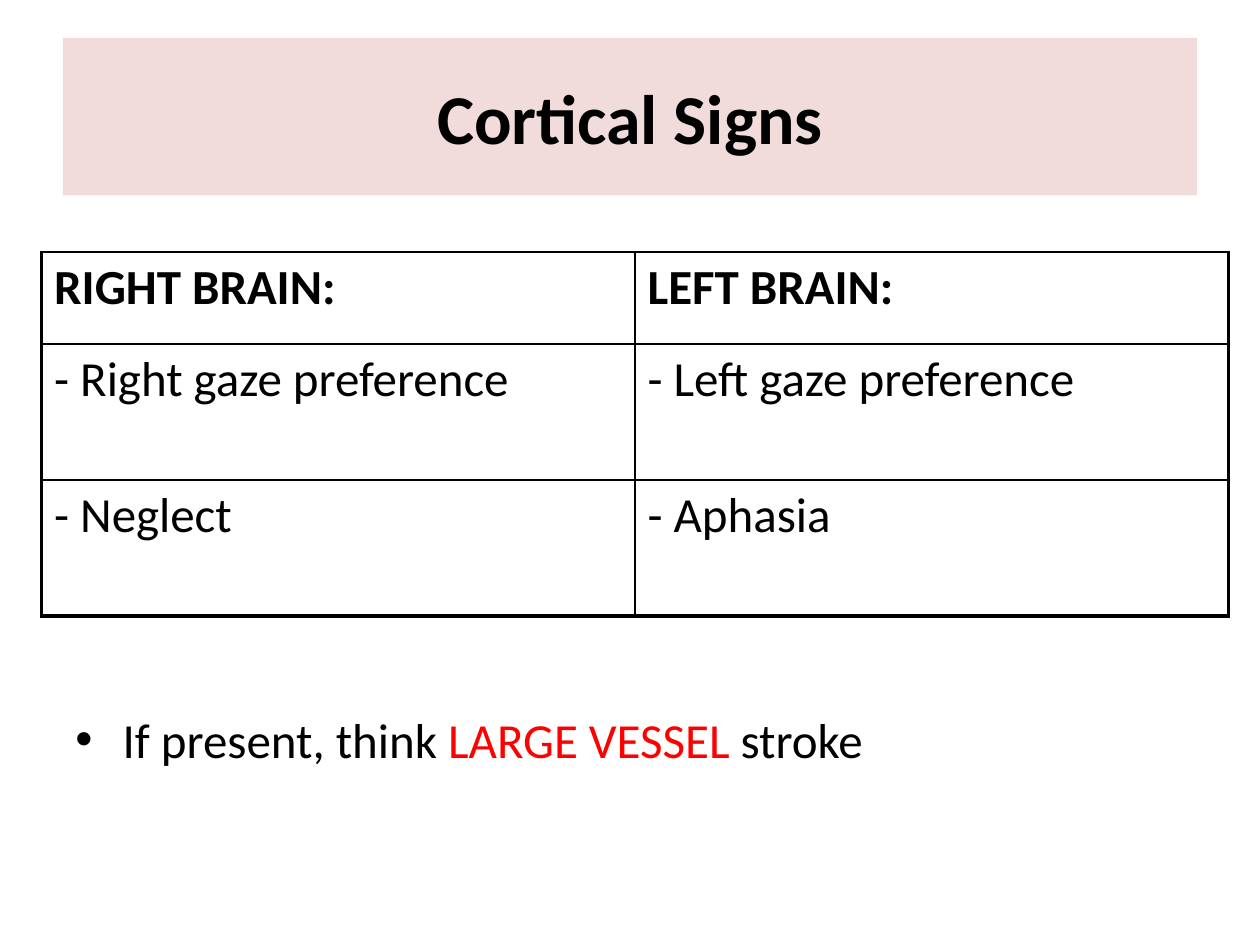
from dataclasses import dataclass

from lxml import etree
from pptx import Presentation
from pptx.dml.color import RGBColor
from pptx.enum.shapes import MSO_SHAPE
from pptx.enum.text import MSO_ANCHOR, PP_ALIGN
from pptx.oxml.ns import qn
from pptx.util import Inches, Pt

RECT = MSO_SHAPE.RECTANGLE
TOP, MIDDLE = MSO_ANCHOR.TOP, MSO_ANCHOR.MIDDLE
LEFT, CENTER = PP_ALIGN.LEFT, PP_ALIGN.CENTER
COLS, ROWS = 100, 75


@dataclass(frozen=True)
class Theme:
    font: str = "Calibri"
    ink: str = "000000"
    alert: str = "FF0000"
    band: str = "F2DCDB"
    head: int = 40
    body: int = 28
    gap: float = 5.6
    thin: float = 1
    thick: float = 2.25


def write(frame, runs, theme, size, bold=False, align=LEFT, gap=0):
    para = frame.paragraphs[0]
    para.alignment = align
    para.space_before = Pt(gap)
    for text, color in runs:
        run = para.add_run()
        run.text = text
        font = run.font
        font.name, font.size, font.bold = theme.font, Pt(size), bold
        font.color.rgb = RGBColor.from_string(color)
    return para


class Deck:
    def __init__(self, theme):
        self.theme = theme
        self.file = Presentation()
        self.file.slide_width, self.file.slide_height = Inches(10), Inches(7.5)
        self.slide = self.file.slides.add_slide(self.file.slide_layouts[6])

    def wide(self, cols):
        return round(self.file.slide_width * cols / COLS)

    def high(self, rows):
        return round(self.file.slide_height * rows / ROWS)

    def place(self, left, top, width, height):
        return self.wide(left), self.high(top), self.wide(width), self.high(height)

    def title(self, text, *box):
        theme = self.theme
        shape = self.slide.shapes.add_shape(RECT, *self.place(*box))
        shape.shadow.inherit = False
        shape.fill.solid()
        shape.fill.fore_color.rgb = RGBColor.from_string(theme.band)
        shape.line.fill.background()
        frame = shape.text_frame
        frame.word_wrap, frame.vertical_anchor = True, MIDDLE
        write(frame, [(text, theme.ink)], theme, theme.head, bold=True, align=CENTER)

    def border(self, cell, sides):
        props = cell._tc.get_or_add_tcPr()
        for spot, (side, width) in enumerate(sides.items()):
            line = etree.Element(qn(f"a:ln{side}"), w=str(Pt(width)))
            fill = etree.SubElement(line, qn("a:solidFill"))
            etree.SubElement(fill, qn("a:srgbClr"), val=self.theme.ink)
            props.insert(spot, line)

    def table(self, data, left, top, width, heights):
        theme = self.theme
        last, end = len(data) - 1, len(data[0]) - 1
        box = self.place(left, top, width, sum(heights))
        grid = self.slide.shapes.add_table(len(data), len(data[0]), *box).table
        grid.first_row = grid.horz_banding = False
        for col in grid.columns:
            col.width = self.wide(width / len(data[0]))
        for r, texts in enumerate(data):
            grid.rows[r].height = self.high(heights[r])
            for c, text in enumerate(texts):
                cell = grid.cell(r, c)
                cell.fill.background()
                cell.vertical_anchor = TOP
                write(cell.text_frame, [(text, theme.ink)], theme, theme.body,
                      bold=r == 0, gap=theme.gap)
                self.border(cell, {
                    "L": theme.thick if c == 0 else theme.thin,
                    "R": theme.thick if c == end else theme.thin,
                    "T": theme.thin,
                    "B": theme.thick if r == last else theme.thin,
                })

    def bullet(self, runs, *box, indent=3.75):
        theme = self.theme
        frame = self.slide.shapes.add_textbox(*self.place(*box)).text_frame
        frame.word_wrap = True
        para = write(frame, runs, theme, theme.body, gap=theme.gap)
        props = para._p.get_or_add_pPr()
        step = self.wide(indent)
        props.set("marL", str(step))
        props.set("indent", str(-step))
        etree.SubElement(props, qn("a:buFont"), typeface="Arial")
        etree.SubElement(props, qn("a:buChar"), char="•")


def main():
    theme = Theme()
    deck = Deck(theme)
    deck.title("Cortical Signs", 5, 3, 90, 12.5)
    signs = [
        ("RIGHT BRAIN:", "LEFT BRAIN:"),
        ("- Right gaze preference", "- Left gaze preference"),
        ("- Neglect", "- Aphasia"),
    ]
    deck.table(signs, 3.3, 20, 94.2, (7.3, 10.8, 10.8))
    deck.bullet([
        ("If present, think ", theme.ink),
        ("LARGE VESSEL ", theme.alert),
        ("stroke", theme.ink),
    ], 5, 55.8, 90, 13.1)
    deck.file.save("out.pptx")


if __name__ == "__main__":
    main()
